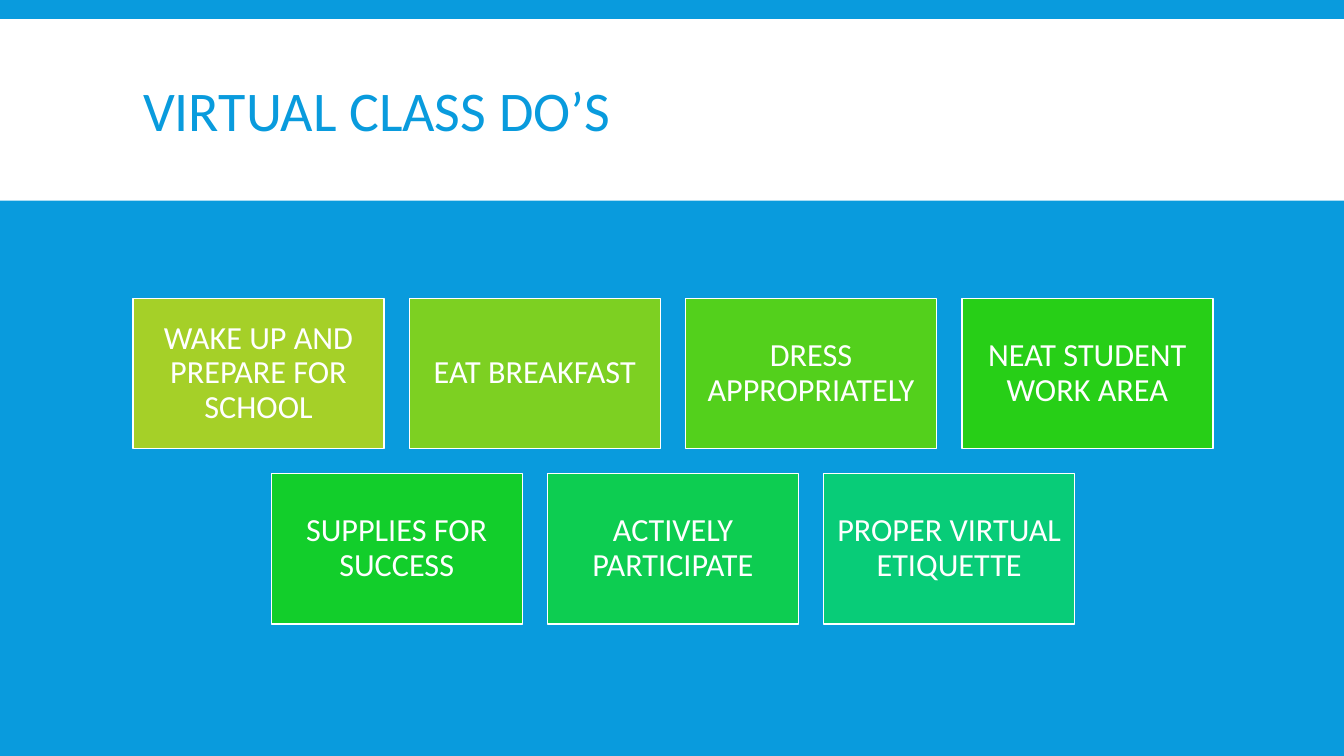
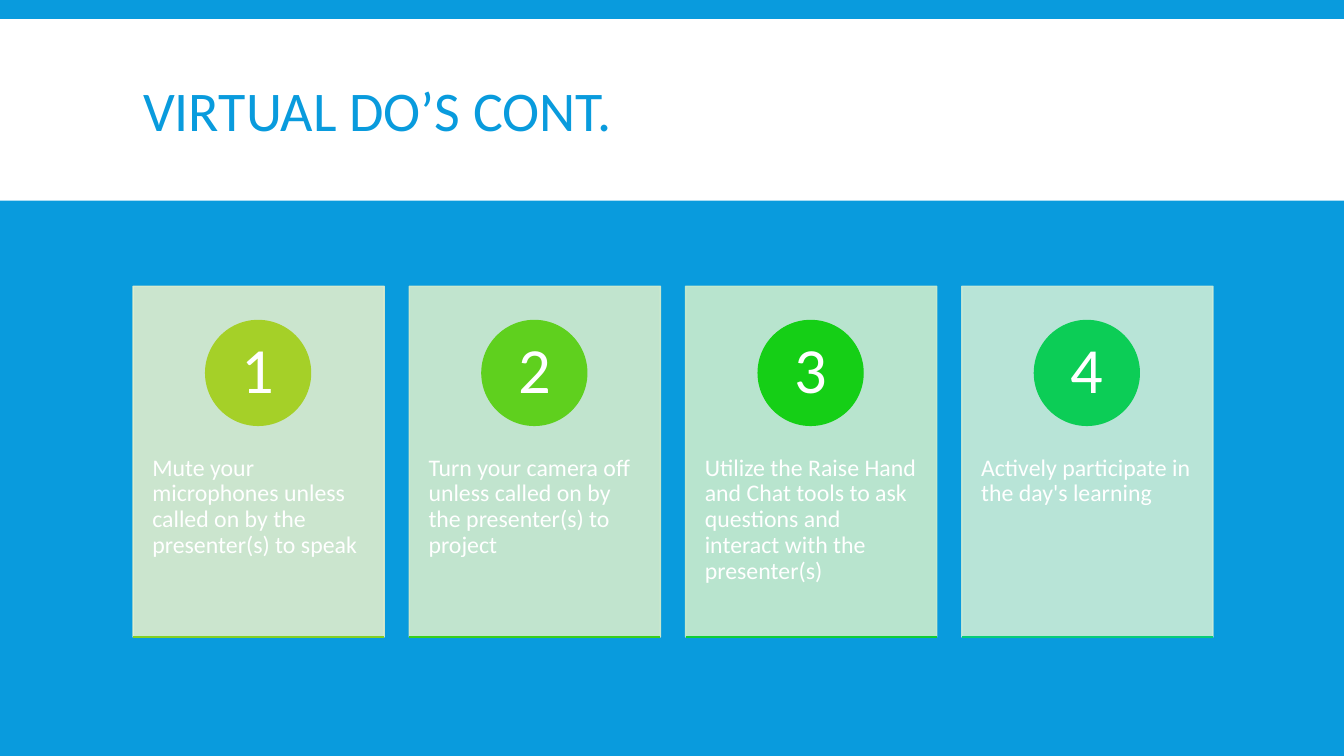
from lxml import etree
from pptx import Presentation
from pptx.dml.color import RGBColor
from pptx.enum.shapes import MSO_CONNECTOR, MSO_SHAPE
from pptx.enum.text import MSO_ANCHOR, MSO_AUTO_SIZE, PP_ALIGN
from pptx.oxml.ns import qn
from pptx.util import Pt

RECT, OVAL = MSO_SHAPE.RECTANGLE, MSO_SHAPE.OVAL
STRAIGHT = MSO_CONNECTOR.STRAIGHT
TOP, MIDDLE = MSO_ANCHOR.TOP, MSO_ANCHOR.MIDDLE
LEFT, CENTER = PP_ALIGN.LEFT, PP_ALIGN.CENTER
NO_FIT = MSO_AUTO_SIZE.NONE

# Scale: 100 px to the inch
PX = 9144
SLIDE_W, SLIDE_H = 1333, 750
TILE_W, TILE_H, GAP = 249, 149, 25
CARD_H, CIRCLE = 348, 104

FONT = "Calibri"
BLUE = RGBColor(0x09, 0x9B, 0xDD)
WHITE = RGBColor(0xFF, 0xFF, 0xFF)

# Rows of tiles: (text, fill)
TILE_ROWS = [
    [("WAKE UP AND PREPARE FOR SCHOOL", RGBColor(0xA5, 0xD0, 0x28)),
     ("EAT BREAKFAST", RGBColor(0x7D, 0xD0, 0x22)),
     ("DRESS APPROPRIATELY", RGBColor(0x53, 0xD0, 0x1C)),
     ("NEAT STUDENT WORK AREA", RGBColor(0x27, 0xCF, 0x17))],
    [("SUPPLIES FOR SUCCESS", RGBColor(0x12, 0xCE, 0x2B)),
     ("ACTIVELY PARTICIPATE", RGBColor(0x0D, 0xCD, 0x51)),
     ("PROPER VIRTUAL ETIQUETTE", RGBColor(0x08, 0xCC, 0x78))],
]

# Cards: (text, card fill, circle fill, base line)
CARDS = [
    ("Mute your microphones unless called on by the presenter(s) to speak",
     RGBColor(0xE1, 0xEE, 0xCD), RGBColor(0xA5, 0xD0, 0x28), RGBColor(0x83, 0xD0, 0x23)),
    ("Turn your camera off unless called on by the presenter(s) to project",
     RGBColor(0xD6, 0xED, 0xCD), RGBColor(0x5F, 0xD0, 0x1E), RGBColor(0x3A, 0xCF, 0x19)),
    ("Utilize the Raise Hand and Chat tools to ask questions and interact with the presenter(s)",
     RGBColor(0xCC, 0xED, 0xCD), RGBColor(0x15, 0xCF, 0x16), RGBColor(0x10, 0xCE, 0x35)),
    ("Actively participate in the day's learning",
     RGBColor(0xCC, 0xEC, 0xD7), RGBColor(0x0C, 0xCD, 0x56), RGBColor(0x08, 0xCC, 0x78)),
]


def px(*lengths):
    return [n * PX for n in lengths]


def row_lefts(count):
    """Left edges of a centred row of equal columns."""
    width = count * TILE_W + (count - 1) * GAP
    left = (SLIDE_W + 1) // 2 - width // 2
    return [left + i * (TILE_W + GAP) for i in range(count)]


def add_box(slide, kind, x, y, w, h, fill, line=None):
    sp = slide.shapes.add_shape(kind, *px(x, y, w, h))
    sp.shadow.inherit = False
    sp.fill.solid()
    sp.fill.fore_color.rgb = fill
    if line is None:
        sp.line.fill.background()
    else:
        sp.line.color.rgb = line
        sp.line.width = Pt(1)
    return sp


def set_opacity(sp, percent):
    for clr in sp.element.spPr.iter(qn("a:srgbClr")):
        etree.SubElement(clr, qn("a:alpha")).set("val", str(percent * 1000))


def set_text(sp, text, size, color=WHITE, align=CENTER, anchor=MIDDLE,
             insets=(10, 10, 10, 10), spacing=0.9):
    tf = sp.text_frame
    tf.text = text
    tf.word_wrap = True
    tf.auto_size = NO_FIT
    tf.vertical_anchor = anchor
    tf.margin_left, tf.margin_top, tf.margin_right, tf.margin_bottom = px(*insets)
    p = tf.paragraphs[0]
    p.alignment = align
    p.line_spacing = spacing
    p.font.name = FONT
    p.font.size = Pt(size)
    p.font.color.rgb = color


def add_rule(slide, x, y, w, color):
    line = slide.shapes.add_connector(STRAIGHT, *px(x, y, x + w, y))
    line.line.color.rgb = color
    line.line.width = Pt(1)
    etree.SubElement(line.element.spPr, qn("a:effectLst"))


def add_card(slide, x, y, number, text, fill, accent, base):
    card = add_box(slide, RECT, x, y, TILE_W, CARD_H, fill, fill)
    set_opacity(card, 90)
    set_text(card, text, 17, align=LEFT, anchor=TOP, insets=(19, 168, 19, 36))
    circle = add_box(slide, OVAL, x + (TILE_W - CIRCLE) // 2, y + 34,
                     CIRCLE, CIRCLE, accent, accent)
    set_text(circle, str(number), 46, insets=(8, 1, 8, 1))
    add_rule(slide, x, y + CARD_H, TILE_W, base)


def add_slide(prs, layout, title):
    slide = prs.slides.add_slide(layout)
    set_text(slide.shapes.title, title, 40, BLUE, LEFT, insets=(10, 5, 10, 5), spacing=0.85)
    return slide


def style_layout(layout):
    """Shared background and title position."""
    fill = layout.background.fill
    fill.solid()
    fill.fore_color.rgb = BLUE
    title = layout.placeholders[0]
    title.left, title.top, title.width, title.height = px(132, 31, 1070, 165)


def add_layout_band(slide):
    """Draw the title band and move it behind everything on the shared layout."""
    band = add_box(slide, RECT, 0, 19, SLIDE_W, 180, WHITE)
    slide.slide_layout.shapes.element.insert(2, band.element)


def main():
    prs = Presentation()
    prs.slide_width, prs.slide_height = px(SLIDE_W, SLIDE_H)
    layout = prs.slide_layouts[5]
    style_layout(layout)

    # Tiles in two centred rows
    slide = add_slide(prs, layout, "VIRTUAL CLASS DO’S")
    add_layout_band(slide)
    for i, row in enumerate(TILE_ROWS):
        y = 296 + i * (TILE_H + GAP)
        for x, (text, fill) in zip(row_lefts(len(row)), row):
            set_text(add_box(slide, RECT, x, y, TILE_W, TILE_H, fill, WHITE), text, 23)

    # Numbered cards
    slide = add_slide(prs, layout, "VIRTUAL DO’S CONT.")
    for number, (x, card) in enumerate(zip(row_lefts(len(CARDS)), CARDS), 1):
        add_card(slide, x, 284, number, *card)

    prs.save("out.pptx")


if __name__ == "__main__":
    main()
